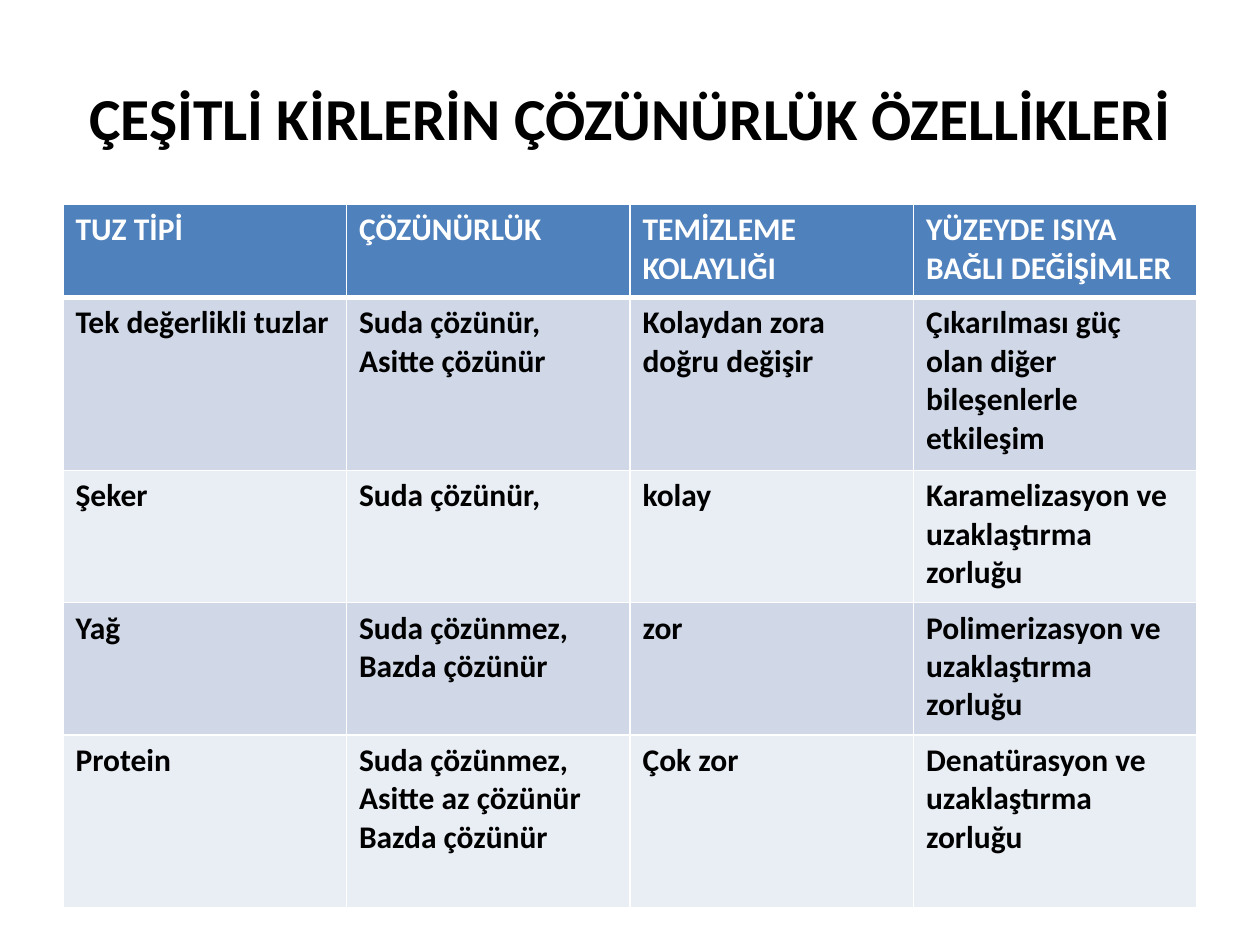
import dataclasses

import lxml.etree
import pptx
import pptx.dml.color
import pptx.enum.text
import pptx.oxml.ns
import pptx.util

Cm = pptx.util.Cm
Pt = pptx.util.Pt
Rgb = pptx.dml.color.RGBColor.from_string


@dataclasses.dataclass(frozen=True)
class Theme:
    font: str = "Calibri"
    ink: str = "000000"
    white: str = "FFFFFF"
    head: str = "4F81BD"
    bands: tuple = ("D0D8E8", "E9EDF4")
    title: int = 34
    body: int = 18
    thin: int = 1
    thick: int = 3


TITLE = "ÇEŞİTLİ KİRLERİN ÇÖZÜNÜRLÜK ÖZELLİKLERİ"
ROWS = [
    ["TUZ TİPİ", "ÇÖZÜNÜRLÜK", "TEMİZLEME KOLAYLIĞI",
     "YÜZEYDE ISIYA BAĞLI DEĞİŞİMLER"],
    ["Tek değerlikli tuzlar", "Suda çözünür,\nAsitte çözünür",
     "Kolaydan zora doğru değişir",
     "Çıkarılması güç olan diğer bileşenlerle etkileşim"],
    ["Şeker", "Suda çözünür,", "kolay",
     "Karamelizasyon ve uzaklaştırma zorluğu"],
    ["Yağ", "Suda çözünmez,\nBazda çözünür", "zor",
     "Polimerizasyon ve uzaklaştırma zorluğu"],
    ["Protein", "Suda çözünmez,\nAsitte az çözünür\nBazda çözünür",
     "Çok zor", "Denatürasyon ve uzaklaştırma zorluğu"],
]
HEIGHTS = [1.88, 3.48, 2.67, 2.67, 3.48]


def write(frame, text, *, font, size, color, bold=True, align=None):
    """Fill a text frame, one paragraph for each line of text."""
    frame.text = text
    for para in frame.paragraphs:
        para.alignment = align
        for run in para.runs:
            run.font.name = font
            run.font.size = Pt(size)
            run.font.bold = bold
            run.font.color.rgb = Rgb(color)


def border(cell, color, widths):
    """Draw the left, right, top and bottom edges of a cell."""
    props = cell._tc.get_or_add_tcPr()
    qn = pptx.oxml.ns.qn
    for index, (side, width) in enumerate(zip("LRTB", widths)):
        line = lxml.etree.Element(qn(f"a:ln{side}"), w=str(Pt(width)))
        fill = lxml.etree.SubElement(line, qn("a:solidFill"))
        lxml.etree.SubElement(fill, qn("a:srgbClr"), val=color)
        props.insert(index, line)


class Page:
    def __init__(self, slide, theme):
        self.slide = slide
        self.theme = theme

    def title(self, text, left, top, width, height):
        box = self.slide.shapes.add_textbox(Cm(left), Cm(top), Cm(width), Cm(height))
        frame = box.text_frame
        frame.word_wrap = True
        frame.vertical_anchor = pptx.enum.text.MSO_ANCHOR.MIDDLE
        write(frame, text, font=self.theme.font, size=self.theme.title,
              color=self.theme.ink, align=pptx.enum.text.PP_ALIGN.CENTER)

    def table(self, rows, heights, left, top, width):
        shape = self.slide.shapes.add_table(
            len(rows), len(rows[0]), Cm(left), Cm(top), Cm(width), Cm(sum(heights)))
        grid = shape.table
        for row, height in zip(grid.rows, heights):
            row.height = Cm(height)
        for r, row in enumerate(rows):
            for c, text in enumerate(row):
                self.cell(grid.cell(r, c), text, r)

    def cell(self, cell, text, row):
        look = self.theme
        fill = look.bands[(row - 1) % 2] if row else look.head
        cell.fill.solid()
        cell.fill.fore_color.rgb = Rgb(fill)
        write(cell.text_frame, text, font=look.font, size=look.body,
              color=look.ink if row else look.white)
        above = look.thick if row == 1 else look.thin
        below = look.thick if row == 0 else look.thin
        border(cell, look.white, (look.thin, look.thin, above, below))


def main():
    deck = pptx.Presentation()
    deck.slide_width = Cm(25.4)
    deck.slide_height = Cm(19.05)
    page = Page(deck.slides.add_slide(deck.slide_layouts[6]), Theme())
    page.title(TITLE, 1.27, 0.76, 22.86, 3.18)
    page.table(ROWS, HEIGHTS, 1.27, 4.12, 22.86)
    deck.save("out.pptx")


if __name__ == "__main__":
    main()
